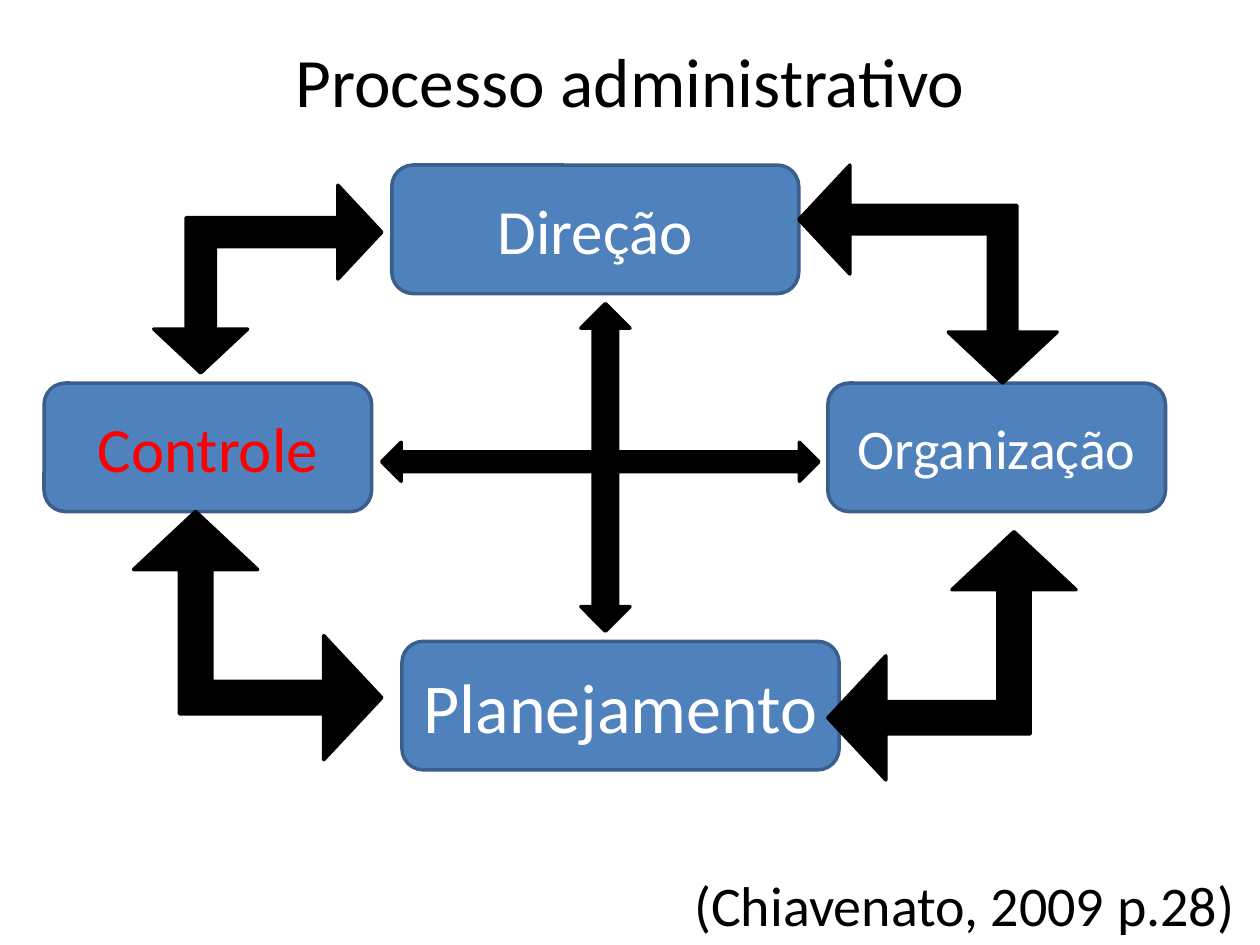
import dataclasses

import pptx
import pptx.dml.color
import pptx.enum.shapes
import pptx.enum.text
import pptx.util

SHAPE = pptx.enum.shapes.MSO_SHAPE
ALIGN = pptx.enum.text.PP_ALIGN
ANCHOR = pptx.enum.text.MSO_ANCHOR


@dataclasses.dataclass(frozen=True)
class Theme:
    font: str = "Calibri"
    ink: str = "000000"
    box: str = "4F81BD"
    box_line: str = "3A5F8C"
    box_text: str = "FFFFFF"
    highlight: str = "FF0000"
    title_size: float = 39.6
    large: float = 40
    medium: float = 36
    small: float = 32
    line_width: float = 2


def color(value):
    return pptx.dml.color.RGBColor.from_string(value)


def write(shape, text, *, font, size, ink, align=ALIGN.CENTER, anchor=ANCHOR.MIDDLE):
    frame = shape.text_frame
    frame.word_wrap = True
    frame.vertical_anchor = anchor
    paragraph = frame.paragraphs[0]
    paragraph.alignment = align
    run = paragraph.add_run()
    run.text = text
    run.font.name = font
    run.font.size = pptx.util.Pt(size)
    run.font.color.rgb = color(ink)


class CycleSlide:
    """Draws a process cycle on a grid of 100 columns by 75 rows."""

    def __init__(self, presentation, theme):
        self.theme = theme
        self.column = presentation.slide_width / 100
        self.row = presentation.slide_height / 75
        self.slide = presentation.slides.add_slide(presentation.slide_layouts[6])

    def place(self, left, top, width, height):
        return (round(left * self.column), round(top * self.row),
                round(width * self.column), round(height * self.row))

    def label(self, text, area, size, **layout):
        shape = self.slide.shapes.add_textbox(*self.place(*area))
        write(shape, text, font=self.theme.font, size=size, ink=self.theme.ink, **layout)

    def solid(self, kind, area, fill, line):
        shape = self.slide.shapes.add_shape(kind, *self.place(*area))
        shape.shadow.inherit = False
        shape.fill.solid()
        shape.fill.fore_color.rgb = color(fill)
        shape.line.color.rgb = color(line)
        shape.line.width = pptx.util.Pt(self.theme.line_width)
        return shape

    def step(self, text, left, top, width, size, ink=None):
        shape = self.solid(SHAPE.ROUNDED_RECTANGLE, (left, top, width, 10.2),
                           self.theme.box, self.theme.box_line)
        write(shape, text, font=self.theme.font, size=size, ink=ink or self.theme.box_text)

    def arrow(self, kind, area):
        return self.solid(kind, area, self.theme.ink, self.theme.ink)

    def corner(self, area, rotation, shaft):
        shape = self.arrow(SHAPE.LEFT_UP_ARROW, area)
        shape.rotation = rotation
        for index, value in enumerate((shaft, 0.25, 0.234)):
            shape.adjustments[index] = value


def main():
    presentation = pptx.Presentation()
    presentation.slide_width = pptx.util.Inches(10)
    presentation.slide_height = pptx.util.Inches(7.5)
    theme = Theme()
    cycle = CycleSlide(presentation, theme)

    cycle.label("Processo administrativo", (7.5, 2.8, 85, 7.1), theme.title_size)
    cycle.label("(Chiavenato, 2009 p.28) ", (48.8, 68.6, 51.2, 6.4), theme.small,
                align=ALIGN.RIGHT, anchor=ANCHOR.TOP)

    middle = 30.4
    cycle.step("Direção", 31.1, 13.1, 32.3, theme.medium)
    cycle.step("Organização", 65.7, middle, 26.8, theme.small)
    cycle.step("Controle", 3.5, middle, 26, theme.medium, theme.highlight)
    cycle.step("Planejamento", 31.9, 50.9, 34.7, theme.large)

    cycle.arrow(SHAPE.UP_DOWN_ARROW, (46.1, 24.1, 3.9, 26))
    cycle.arrow(SHAPE.LEFT_RIGHT_ARROW, (30.3, 35.1, 34.7, 3.1))

    cycle.corner((12.2, 14.7, 18.1, 14.9), 180, 0.155)
    cycle.corner((65, 11.5, 17.3, 20.5), 270, 0.13)
    cycle.corner((65.7, 42.2, 19.7, 19.7), 0, 0.13)
    cycle.corner((10.6, 40.6, 19.7, 19.7), 90, 0.13)

    presentation.save("out.pptx")


if __name__ == "__main__":
    main()
